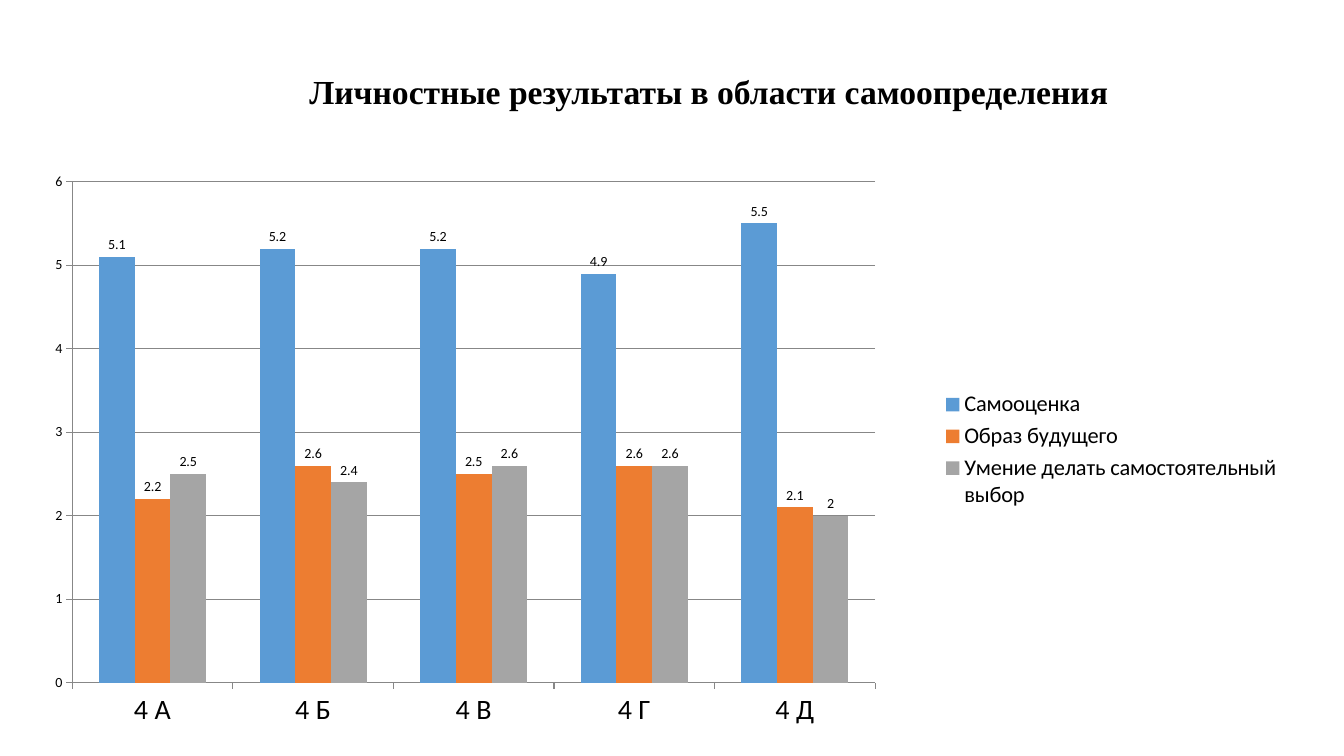
from lxml import etree
from pptx import Presentation
from pptx.chart.data import CategoryChartData
from pptx.dml.color import RGBColor
from pptx.enum.chart import (
    XL_CHART_TYPE as ChartType,
    XL_LABEL_POSITION as LabelPosition,
    XL_LEGEND_POSITION as LegendPosition,
    XL_TICK_MARK as TickMark,
)
from pptx.enum.text import MSO_AUTO_SIZE as AutoSize
from pptx.oxml.ns import qn
from pptx.util import Pt

BLACK = RGBColor(0x00, 0x00, 0x00)
GRID_GRAY = RGBColor(0x87, 0x87, 0x87)
BLUE = RGBColor(0x5B, 0x9B, 0xD5)
ORANGE = RGBColor(0xED, 0x7D, 0x31)
GRAY = RGBColor(0xA5, 0xA5, 0xA5)

CLASSES = ["4 А", "4 Б", "4 В", "4 Г", "4 Д"]
SKILLS = [
    ("Самооценка", [5.1, 5.2, 5.2, 4.9, 5.5], BLUE),
    ("Образ будущего", [2.2, 2.6, 2.5, 2.6, 2.1], ORANGE),
    ("Умение делать самостоятельный выбор", [2.5, 2.4, 2.6, 2.6, 2], GRAY),
]
PLOT_LAYOUT = [
    ("layoutTarget", "inner"),
    ("xMode", "edge"),
    ("yMode", "edge"),
    ("x", "0.02"),
    ("y", "0.017"),
    ("w", "0.645"),
    ("h", "0.902"),
]


def format_font(font, size, name="Calibri", color=BLACK, bold=False):
    font.size = Pt(size)
    font.name = name
    font.color.rgb = color
    font.bold = bold


deck = Presentation()
deck.slide_width, deck.slide_height = Pt(960), Pt(540)
page = deck.slides.add_slide(deck.slide_layouts[6])

# Chart
data = CategoryChartData(number_format="General")
data.categories = CLASSES
for name, scores, color in SKILLS:
    data.add_series(name, scores)
chart = page.shapes.add_chart(
    ChartType.COLUMN_CLUSTERED, Pt(33.84), Pt(123.12), Pt(889.2), Pt(396.72), data
).chart
chart.has_title = False
format_font(chart.font, 10)

# Columns
plot = chart.plots[0]
plot.gap_width = 150
plot.overlap = 0
plot.vary_by_categories = False
for series, (name, scores, color) in zip(plot.series, SKILLS):
    series.format.fill.solid()
    series.format.fill.fore_color.rgb = color
    labels = series.data_labels
    labels.show_value = True
    labels.position = LabelPosition.OUTSIDE_END
    format_font(labels.font, 10)

# Axes
value_axis, class_axis = chart.value_axis, chart.category_axis
value_axis.minimum_scale, value_axis.maximum_scale = 0, 6
value_axis.major_unit = 1
value_axis.has_major_gridlines = True
for axis, size in [(value_axis, 10), (class_axis, 20)]:
    axis.major_tick_mark = TickMark.OUTSIDE
    axis.minor_tick_mark = TickMark.NONE
    format_font(axis.tick_labels.font, size)
for line in [value_axis.format.line, class_axis.format.line,
             value_axis.major_gridlines.format.line]:
    line.color.rgb = GRID_GRAY
    line.width = Pt(0.75)

# Legend
chart.has_legend = True
chart.legend.position = LegendPosition.RIGHT
chart.legend.include_in_layout = False
format_font(chart.legend.font, 16)

# Fixed plot area
plot_area = chart.element.find(".//" + qn("c:plotArea"))
layout = plot_area.find(qn("c:layout"))
if layout is None:
    layout = etree.Element(qn("c:layout"))
    plot_area.insert(0, layout)
manual = etree.SubElement(layout, qn("c:manualLayout"))
for tag, value in PLOT_LAYOUT:
    etree.SubElement(manual, qn("c:" + tag)).set("val", value)

# Title
box = page.shapes.add_textbox(Pt(213.84), Pt(46.8), Pt(591.12), Pt(36))
box.text_frame.word_wrap = False
box.text_frame.auto_size = AutoSize.SHAPE_TO_FIT_TEXT
span = box.text_frame.paragraphs[0].add_run()
span.text = "Личностные результаты в области самоопределения"
format_font(span.font, 24, name="Times New Roman", bold=True)

deck.save("out.pptx")
